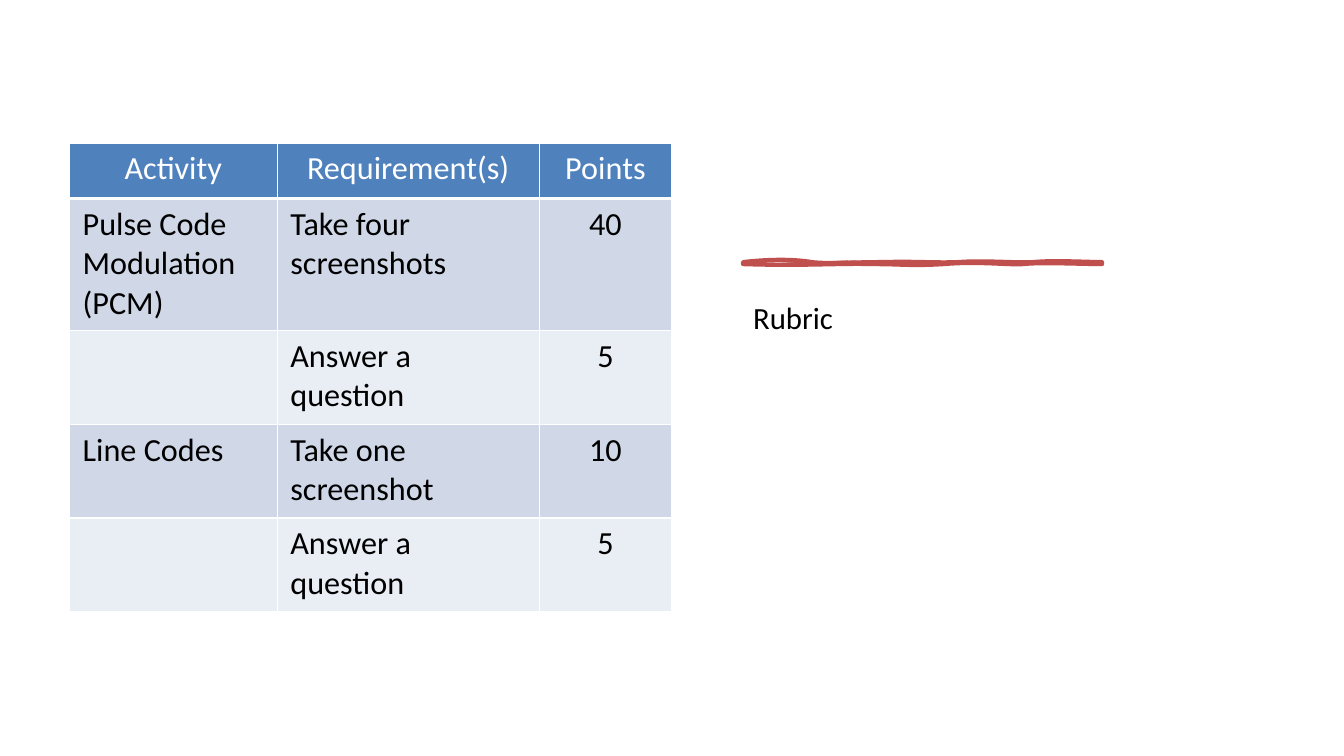
from lxml.etree import SubElement
from pptx import Presentation
from pptx.dml.color import RGBColor
from pptx.enum.text import PP_ALIGN
from pptx.oxml.ns import qn
from pptx.util import Inches, Pt

RED = "C0504D"
WHITE = "FFFFFF"
HEAD = "4F81BD"
BANDS = ("D0D8E8", "E9EDF4")
COLS = (2.06, 2.6, 1.31)
HIGHS = (0.55, 1.31, 0.93, 0.93, 0.93)
ROWS = (
    ("Activity", "Requirement(s)", "Points"),
    ("Pulse Code Modulation (PCM)", "Take four screenshots", "40"),
    ("", "Answer a question", "5"),
    ("Line Codes", "Take one screenshot", "10"),
    ("", "Answer a question", "5"),
)

# Brush stroke: its box, then a start point and two handles and an end per curve
BRUSH = (7.37, 2.6, 3.56, 0.02)
EDGE = (
    (7.37, 2.6),
    (7.63, 2.57), (7.88, 2.57), (8.05, 2.6),
    (8.22, 2.62), (8.44, 2.6), (8.76, 2.6),
    (9.08, 2.59), (9.27, 2.61), (9.51, 2.6),
    (9.75, 2.58), (10.05, 2.61), (10.25, 2.6),
    (10.45, 2.58), (10.78, 2.6), (10.93, 2.6),
    (10.93, 2.6), (10.93, 2.61), (10.93, 2.62),
    (10.75, 2.62), (10.31, 2.6), (10.15, 2.62),
    (9.98, 2.63), (9.71, 2.59), (9.36, 2.62),
    (9.02, 2.64), (8.97, 2.62), (8.65, 2.62),
    (8.33, 2.61), (7.98, 2.64), (7.37, 2.62),
    (7.37, 2.61), (7.37, 2.6), (7.37, 2.6),
)
CORE = (
    (7.37, 2.6),
    (7.69, 2.62), (7.77, 2.6), (8.05, 2.6),
    (8.33, 2.59), (8.36, 2.57), (8.65, 2.6),
    (8.94, 2.62), (9.28, 2.61), (9.43, 2.6),
    (9.59, 2.58), (9.94, 2.62), (10.11, 2.6),
    (10.29, 2.57), (10.64, 2.63), (10.93, 2.6),
    (10.93, 2.6), (10.93, 2.61), (10.93, 2.62),
    (10.78, 2.61), (10.39, 2.64), (10.22, 2.62),
    (10.05, 2.59), (9.76, 2.62), (9.43, 2.62),
    (9.11, 2.61), (9.06, 2.6), (8.83, 2.62),
    (8.6, 2.63), (8.46, 2.61), (8.12, 2.62),
    (7.78, 2.62), (7.59, 2.61), (7.37, 2.62),
    (7.37, 2.61), (7.37, 2.6), (7.37, 2.6),
)


def paint(fmt, color):
    """Give a fill one solid colour."""
    fmt.solid()
    fmt.fore_color.rgb = RGBColor.from_string(color)


def write(frame, text, size=23, color="000000", align=PP_ALIGN.LEFT):
    para = frame.paragraphs[0]
    para.alignment = align
    run = para.add_run()
    run.text = text
    run.font.name = "Calibri"
    run.font.size = Pt(size)
    run.font.bold = False
    run.font.color.rgb = RGBColor.from_string(color)
    return para


def curve(paths, points, **flags):
    """Add a closed chain of cubic curves, measured from the brush's corner."""
    left, top, wide, high = BRUSH
    route = SubElement(paths, qn("a:path"), w=str(Inches(wide)),
                       h=str(Inches(high)), **flags)
    step = SubElement(route, qn("a:moveTo"))
    for i, (x, y) in enumerate(points):
        if i % 3 == 1:
            step = SubElement(route, qn("a:cubicBezTo"))
        SubElement(step, qn("a:pt"), x=str(Inches(x) - Inches(left)),
                   y=str(Inches(y) - Inches(top)))
    SubElement(route, qn("a:close"))


def stroke(slide):
    left, top, wide, high = (Inches(n) for n in BRUSH)
    pen = slide.shapes.build_freeform(left, top)
    pen.add_line_segments([(left + wide, top), (left + wide, top + high)])
    shape = pen.convert_to_shape()
    shape.shadow.inherit = False
    paint(shape.fill, RED)
    paint(shape.line.fill, RED)
    shape.line.width = Pt(3)
    paths = next(shape.element.iter(qn("a:pathLst")))
    paths.remove(paths[0])
    curve(paths, EDGE, fill="none")
    curve(paths, CORE, stroke="0")


def border(cell, base):
    """Draw white cell sides, which come before the fill in the XML."""
    props = cell._tc.get_or_add_tcPr()
    for i, (side, wide) in enumerate(zip("LRTB", (1, 1, 1, base))):
        edge = SubElement(props, qn("a:ln" + side), w=str(Pt(wide)))
        fill = SubElement(edge, qn("a:solidFill"))
        SubElement(fill, qn("a:srgbClr"), val=WHITE)
        props.insert(i, edge)


def grid(slide):
    table = slide.shapes.add_table(
        len(ROWS), len(COLS), Inches(0.69), Inches(1.42),
        Inches(sum(COLS)), Inches(sum(HIGHS))).table
    table.horz_banding = False
    for col, wide in zip(table.columns, COLS):
        col.width = Inches(wide)
    for i, (row, high) in enumerate(zip(table.rows, HIGHS)):
        row.height = Inches(high)
        for j, cell in enumerate(row.cells):
            head = i == 0
            cell.margin_left = cell.margin_right = Inches(0.13)
            cell.margin_top = cell.margin_bottom = Inches(0.06)
            paint(cell.fill, HEAD if head else BANDS[(i - 1) % 2])
            border(cell, 3 if head else 1)
            if ROWS[i][j]:
                mid = head or j == 2
                write(cell.text_frame, ROWS[i][j],
                      color=WHITE if head else "000000",
                      align=PP_ALIGN.CENTER if mid else PP_ALIGN.LEFT)


def label(slide):
    body = slide.placeholders[1]
    body.left, body.top = Inches(7.37), Inches(2.91)
    body.width, body.height = Inches(5.27), Inches(3.88)
    para = write(body.text_frame, "Rubric", size=22)
    props = para._p.get_or_add_pPr()
    props.set("marL", str(Inches(0.38)))
    props.set("indent", str(Inches(-0.38)))
    para.space_before = Pt(4.4)
    SubElement(props, qn("a:buNone"))


def main():
    deck = Presentation()
    deck.slide_width, deck.slide_height = Inches(13.33), Inches(7.5)
    slide = deck.slides.add_slide(deck.slide_layouts[1])
    title = slide.shapes.title
    title.element.getparent().remove(title.element)

    # Rubric heading under its brush stroke
    stroke(slide)
    label(slide)

    # Points for each activity
    grid(slide)
    deck.save("out.pptx")


if __name__ == "__main__":
    main()
